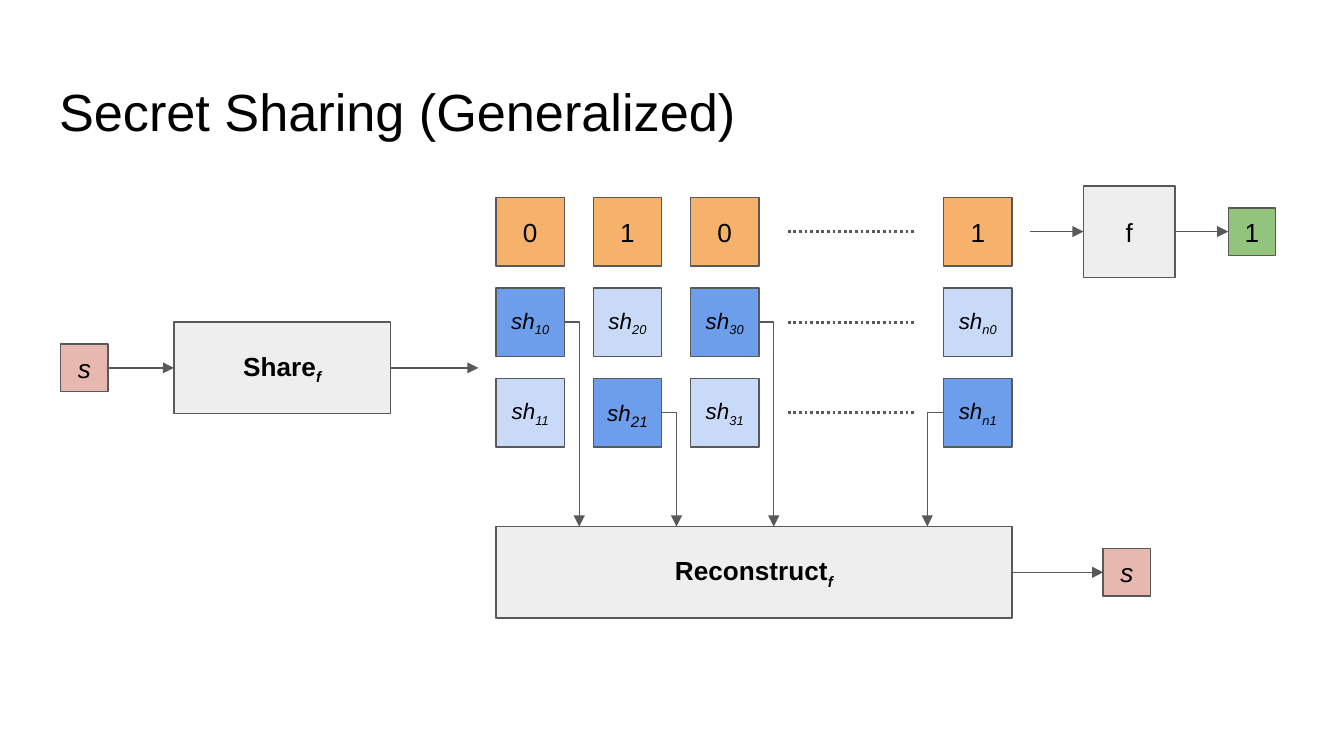
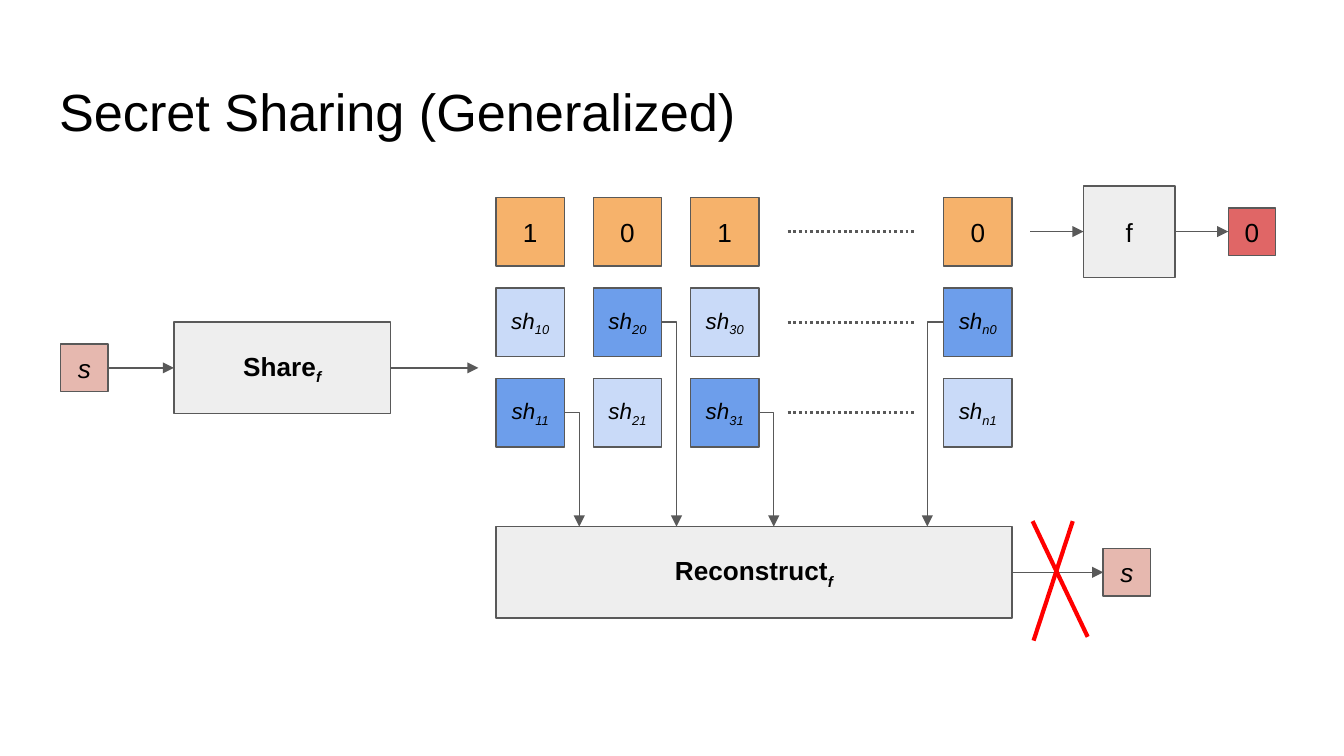
from lxml import etree
from pptx import Presentation
from pptx.dml.color import RGBColor
from pptx.enum.dml import MSO_LINE
from pptx.enum.shapes import MSO_CONNECTOR, MSO_SHAPE
from pptx.enum.text import MSO_ANCHOR, MSO_AUTO_SIZE, PP_ALIGN
from pptx.oxml.ns import qn
from pptx.util import Pt

RECTANGLE = MSO_SHAPE.RECTANGLE
STRAIGHT, ELBOW = MSO_CONNECTOR.STRAIGHT, MSO_CONNECTOR.ELBOW
DOTTED = MSO_LINE.ROUND_DOT
CENTER, LEFT = PP_ALIGN.CENTER, PP_ALIGN.LEFT
MIDDLE, TOP = MSO_ANCHOR.MIDDLE, MSO_ANCHOR.TOP
NO_AUTOFIT = MSO_AUTO_SIZE.NONE

BLACK = RGBColor(0x00, 0x00, 0x00)
OUTLINE = RGBColor(0x59, 0x59, 0x59)
GRAY = RGBColor(0xEE, 0xEE, 0xEE)
PINK = RGBColor(0xE6, 0xB8, 0xAF)
ORANGE = RGBColor(0xF6, 0xB2, 0x6B)
PALE_BLUE = RGBColor(0xC9, 0xDA, 0xF8)
BLUE = RGBColor(0x6D, 0x9E, 0xEB)
GREEN = RGBColor(0x93, 0xC4, 0x7D)
SOFT_RED = RGBColor(0xE0, 0x66, 0x66)
RED = RGBColor(0xFF, 0x00, 0x00)

FONT = "Arial"
INSET = 7.2
CELL, SMALL, BLOCK = 36.7, 25.4, 49
COLUMNS = [265.7, 317.8, 369.9, 505.5]
PARTIES = ["1", "2", "3", "n"]
ROW_CENTERS = [124.1, 172.6, 221.1]
SHARE_Y, RECONSTRUCT_Y = 197.1, 306.6
RECONSTRUCT_TOP = RECONSTRUCT_Y - BLOCK / 2
GRID_WIDTH = COLUMNS[-1] + CELL - COLUMNS[0]


def add_box(slide, left, center_y, width, height, fill, label, subscript="",
            size=14, bold=False, italic=False, subscript_size=None):
    box = slide.shapes.add_shape(RECTANGLE, Pt(left), Pt(center_y - height / 2), Pt(width), Pt(height))
    box.shadow.inherit = False
    box.fill.solid()
    box.fill.fore_color.rgb = fill
    box.line.color.rgb = OUTLINE
    box.line.width = Pt(0.75)
    frame = box.text_frame
    frame.word_wrap = True
    frame.vertical_anchor = MIDDLE
    frame.margin_left = frame.margin_right = frame.margin_top = frame.margin_bottom = Pt(INSET)
    paragraph = frame.paragraphs[0]
    paragraph.alignment = CENTER
    paragraph.font.name = FONT
    paragraph.font.size = Pt(size)
    paragraph.font.bold = bold
    paragraph.font.italic = italic
    paragraph.font.color.rgb = BLACK
    paragraph.add_run().text = label
    if subscript:
        lowered = paragraph.add_run()
        lowered.text = subscript
        lowered.font.italic = True
        if subscript_size:
            lowered.font.size = Pt(subscript_size)
        lowered.font._element.set("baseline", "-25000")
    return box


def add_line(slide, start, end, kind=STRAIGHT, color=OUTLINE, width=0.75, arrow=True):
    line = slide.shapes.add_connector(kind, Pt(start[0]), Pt(start[1]), Pt(end[0]), Pt(end[1]))
    line.line.color.rgb = color
    line.line.width = Pt(width)
    properties = line._element.spPr
    if kind == ELBOW:
        properties.find(qn("a:prstGeom")).set("prst", "bentConnector2")
    if arrow:
        etree.SubElement(properties.find(qn("a:ln")), qn("a:tailEnd"), type="triangle")
    etree.SubElement(properties, qn("a:effectLst"))
    return line


presentation = Presentation()
presentation.slide_width = Pt(720)
presentation.slide_height = Pt(405)

cases = [
    {"bits": [0, 1, 0, 1], "result": "1", "result_fill": GREEN, "blocked": False},
    {"bits": [1, 0, 1, 0], "result": "0", "result_fill": SOFT_RED, "blocked": True},
]

for case in cases:
    slide = presentation.slides.add_slide(presentation.slide_layouts[5])
    title = slide.shapes.title
    title.left, title.top, title.width, title.height = Pt(24.5), Pt(35.3), Pt(671), Pt(45.4)
    heading = title.text_frame
    heading.text = "Secret Sharing (Generalized)"
    heading.auto_size = NO_AUTOFIT
    heading.vertical_anchor = TOP
    heading.margin_left = heading.margin_right = heading.margin_top = heading.margin_bottom = Pt(INSET)
    heading.paragraphs[0].alignment = LEFT
    heading.paragraphs[0].font.name = FONT
    heading.paragraphs[0].font.size = Pt(28)
    heading.paragraphs[0].font.color.rgb = BLACK

    secret = add_box(slide, 32.6, SHARE_Y, SMALL, SMALL, PINK, "s", italic=True)
    share = add_box(slide, 93.2, SHARE_Y, 115.9, BLOCK, GRAY, "Share", "f", bold=True)
    reconstruct = add_box(slide, COLUMNS[0], RECONSTRUCT_Y, GRID_WIDTH, BLOCK, GRAY,
                          "Reconstruct", "f", bold=True)
    recovered = add_box(slide, 591, RECONSTRUCT_Y, SMALL, SMALL, PINK, "s", italic=True)
    function = add_box(slide, 580.5, ROW_CENTERS[0], BLOCK, BLOCK, GRAY, "f")
    result = add_box(slide, 658, ROW_CENTERS[0], SMALL, SMALL, case["result_fill"], case["result"])

    for source, target in [(secret, share), (reconstruct, recovered), (function, result)]:
        link = add_line(slide, (0, 0), (0, 0))
        link.begin_connect(source, 3)
        link.end_connect(target, 1)
    add_line(slide, (209.1, SHARE_Y), (256.3, SHARE_Y)).begin_connect(share, 3)
    add_line(slide, (551.8, ROW_CENTERS[0]), (580.5, ROW_CENTERS[0])).end_connect(function, 1)

    for center_y in ROW_CENTERS:
        dots = add_line(slide, (422, center_y), (490.3, center_y), width=1.5, arrow=False)
        dots.line.dash_style = DOTTED

    for left, party, bit in zip(COLUMNS, PARTIES, case["bits"]):
        add_box(slide, left, ROW_CENTERS[0], CELL, CELL, ORANGE, str(bit))
        for value, center_y in enumerate(ROW_CENTERS[1:]):
            chosen = value == bit
            index = f"{party}{value}"
            enlarged = 14 if chosen and index == "21" else None
            add_box(slide, left, center_y, CELL, CELL, BLUE if chosen else PALE_BLUE,
                    "sh", index, size=12, italic=True, subscript_size=enlarged)
        side, drop_x = (left, left - 8.7) if party == "n" else (left + CELL, left + CELL + 7.9)
        add_line(slide, (side, ROW_CENTERS[1 + bit]), (drop_x, RECONSTRUCT_TOP), kind=ELBOW)

    if case["blocked"]:
        for start, end in [((553.2, 279.2), (582.7, 341.2)), ((574.7, 279.2), (553.7, 343.2))]:
            add_line(slide, start, end, color=RED, width=2.25, arrow=False)

presentation.save("out.pptx")
